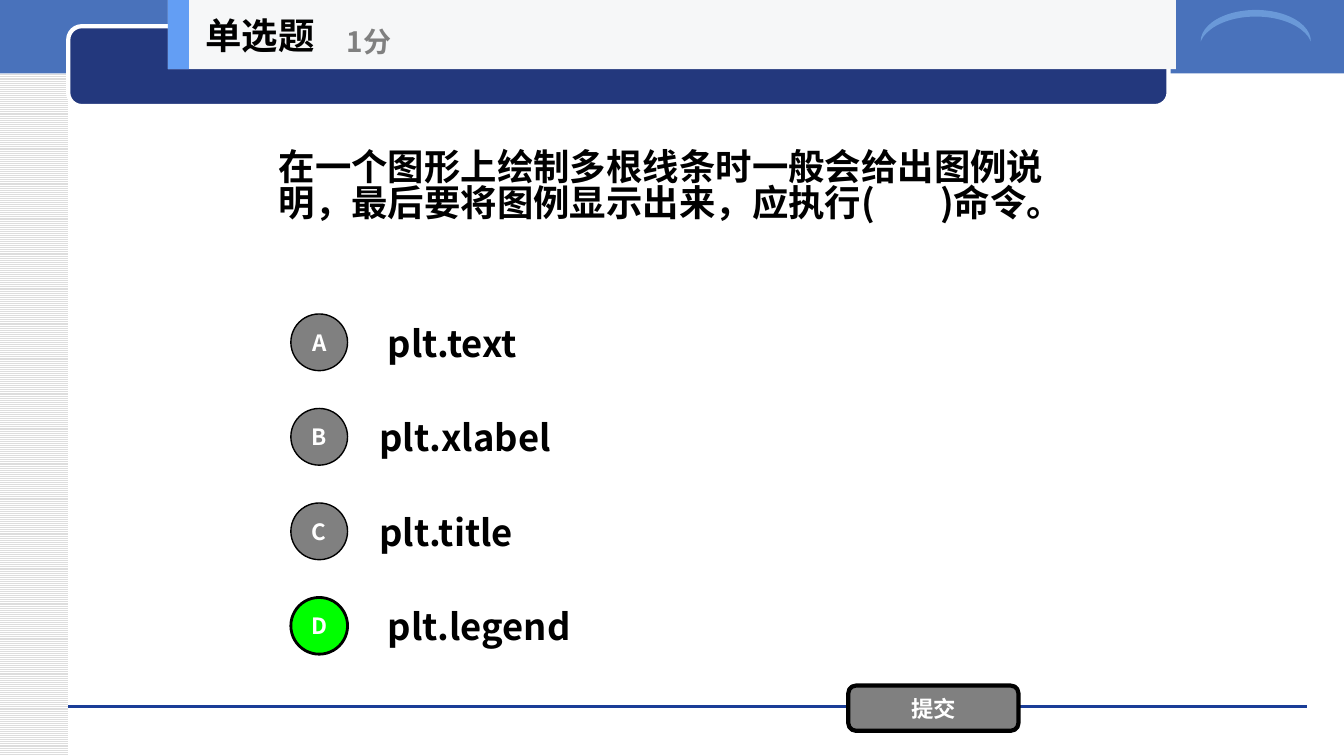
from dataclasses import dataclass

from lxml import etree
from pptx import Presentation
from pptx.dml.color import RGBColor
from pptx.enum.dml import MSO_PATTERN
from pptx.enum.shapes import MSO_CONNECTOR, MSO_SHAPE
from pptx.enum.text import MSO_ANCHOR, PP_ALIGN
from pptx.oxml.ns import qn
from pptx.util import Pt

PX = 9525
RECT, ROUNDED = MSO_SHAPE.RECTANGLE, MSO_SHAPE.ROUNDED_RECTANGLE
OVAL, MOON = MSO_SHAPE.OVAL, MSO_SHAPE.MOON
STRAIGHT = MSO_CONNECTOR.STRAIGHT
LIGHT_HORIZONTAL = MSO_PATTERN.LIGHT_HORIZONTAL
LEFT, CENTER, MIDDLE = PP_ALIGN.LEFT, PP_ALIGN.CENTER, MSO_ANCHOR.MIDDLE
BLANK = " "
QUESTION = ("在一个图形上绘制多根线条时一般会给出图例说明，最后要将图例显示出来，应执行(",
            BLANK, ")命令。")
OPTIONS = {"A": " plt.text", "B": "plt.xlabel", "C": "plt.title", "D": " plt.legend"}
CORRECT = "D"


@dataclass(frozen=True)
class Theme:
    """Colours, font and type sizes of the quiz slide."""
    font: str = "Noto Sans CJK SC"
    ink: str = "000000"
    white: str = "FFFFFF"
    grey: str = "808080"
    correct: str = "00FF00"
    stripe: str = "DDDDDD"
    band: str = "4972BB"
    plate: str = "23387D"
    rule: str = "1A3D97"
    arc: str = "6A99D8"
    header: str = "F6F7F8"
    accent: str = "639EF4"
    body_size: int = 26
    score_size: int = 20
    label_size: int = 16
    blank_width: int = 40
    question_spacing: float = 0.82


THEME = Theme()


def rgb(value):
    """Turn a hex string into a colour."""
    return RGBColor.from_string(value)


def emu(box):
    """Scale pixel lengths to EMU."""
    return [length * PX for length in box]


def write(shape, *parts, size=THEME.body_size, color=THEME.ink, align=LEFT, spacing=None):
    """Write bold text into a shape, widening each blank part."""
    frame = shape.text_frame
    frame.word_wrap = True
    frame.vertical_anchor = MIDDLE
    paragraph = frame.paragraphs[0]
    paragraph.alignment = align
    if spacing:
        paragraph.line_spacing = spacing
    for part in parts:
        run = paragraph.add_run()
        run.text = part
        run.font.name, run.font.size, run.font.bold = THEME.font, Pt(size), True
        run.font.color.rgb = rgb(color)
        properties = run._r.get_or_add_rPr()
        etree.SubElement(properties, qn("a:ea"), typeface=THEME.font)
        if part == BLANK:
            properties.set("spc", str(THEME.blank_width * 100))


def add_text(slide, box, *parts, **style):
    """Add a text box with formatted text."""
    write(slide.shapes.add_textbox(*emu(box)), *parts, **style)


def add_block(slide, kind, box, fill, line=None, width=0, adjust=None):
    """Add a filled preset shape with an optional outline."""
    block = slide.shapes.add_shape(kind, *emu(box))
    block.shadow.inherit = False
    block.fill.solid()
    block.fill.fore_color.rgb = rgb(fill)
    if line:
        block.line.color.rgb = rgb(line)
        block.line.width = Pt(width)
    else:
        block.line.fill.background()
    if adjust is not None:
        block.adjustments[0] = adjust
    return block


def add_backdrop(slide, width, height):
    """Draw the side stripes, top band, plate, arc and footer rule."""
    margin = 65
    stripes = add_block(slide, RECT, (0, 0, margin, height), THEME.white)
    stripes.fill.patterned()
    stripes.fill.pattern = LIGHT_HORIZONTAL
    stripes.fill.fore_color.rgb = rgb(THEME.stripe)
    stripes.fill.back_color.rgb = rgb(THEME.white)
    add_block(slide, RECT, (0, 0, width, 70), THEME.band)
    rule_y = height - 47
    rule = slide.shapes.add_connector(
        STRAIGHT, *emu((margin, rule_y, width - 35, rule_y)))
    rule.line.color.rgb = rgb(THEME.rule)
    rule.line.width = Pt(0)
    etree.SubElement(rule.element.spPr, qn("a:effectLst"))
    add_block(slide, ROUNDED, (margin, 25, 1048, 76), THEME.plate, THEME.white, 3, 0.17)
    arc = add_block(slide, MOON, (width - 99, -28, 30, 105), THEME.arc, adjust=0.21)
    arc.rotation = 90


def add_question(slide, box):
    """Place the question text in its box."""
    add_text(slide, box, *QUESTION, spacing=THEME.question_spacing)


def add_options(slide, box):
    """Stack lettered answers at equal steps, highlighting the correct one."""
    left, top, width, height = box
    step, row, badge_size, indent = height // len(OPTIONS), 67, 54, 75
    for index, (letter, answer) in enumerate(OPTIONS.items()):
        y = top + index * step
        add_text(slide, (left + indent, y, width - indent, row), answer)
        fill, outline = (THEME.correct, 2) if letter == CORRECT else (THEME.grey, 1)
        badge = add_block(
            slide, OVAL, (left, y + (row - badge_size) // 2, badge_size, badge_size),
            fill, THEME.ink, outline)
        write(badge, letter, size=THEME.label_size, color=THEME.white, align=CENTER)


def add_submit(slide, box):
    """Place the submit button."""
    button = add_block(slide, ROUNDED, box, THEME.grey, THEME.ink, 3)
    write(button, "提交", size=THEME.label_size, color=THEME.white, align=CENTER)


def add_header(slide, box):
    """Draw the header bar with the question type as title and its score."""
    left, top, width, height = box
    add_block(slide, RECT, box, THEME.header)
    add_block(slide, RECT, (left, top, 20, height), THEME.accent)
    title = slide.shapes.title
    title.left, title.top, title.width, title.height = emu((left + 26, top, 200, height))
    write(title, "单选题")
    slide.shapes.element.append(title.element)
    add_text(slide, (left + 161, top + 12, 240, height - 12), "1分",
             size=THEME.score_size, color=THEME.grey)


def main():
    """Build and save the quiz slide."""
    width, height = 1280, 720
    deck = Presentation()
    deck.slide_width, deck.slide_height = emu((width, height))
    slide = deck.slides.add_slide(deck.slide_layouts.get_by_name("Title Only"))
    add_backdrop(slide, width, height)
    add_question(slide, (256, 66, 768, 225))
    add_options(slide, (277, 293, 747, 360))
    add_submit(slide, (808, 653, 162, 43))
    add_header(slide, (160, 0, 960, 66))
    deck.save("out.pptx")


if __name__ == "__main__":
    main()
